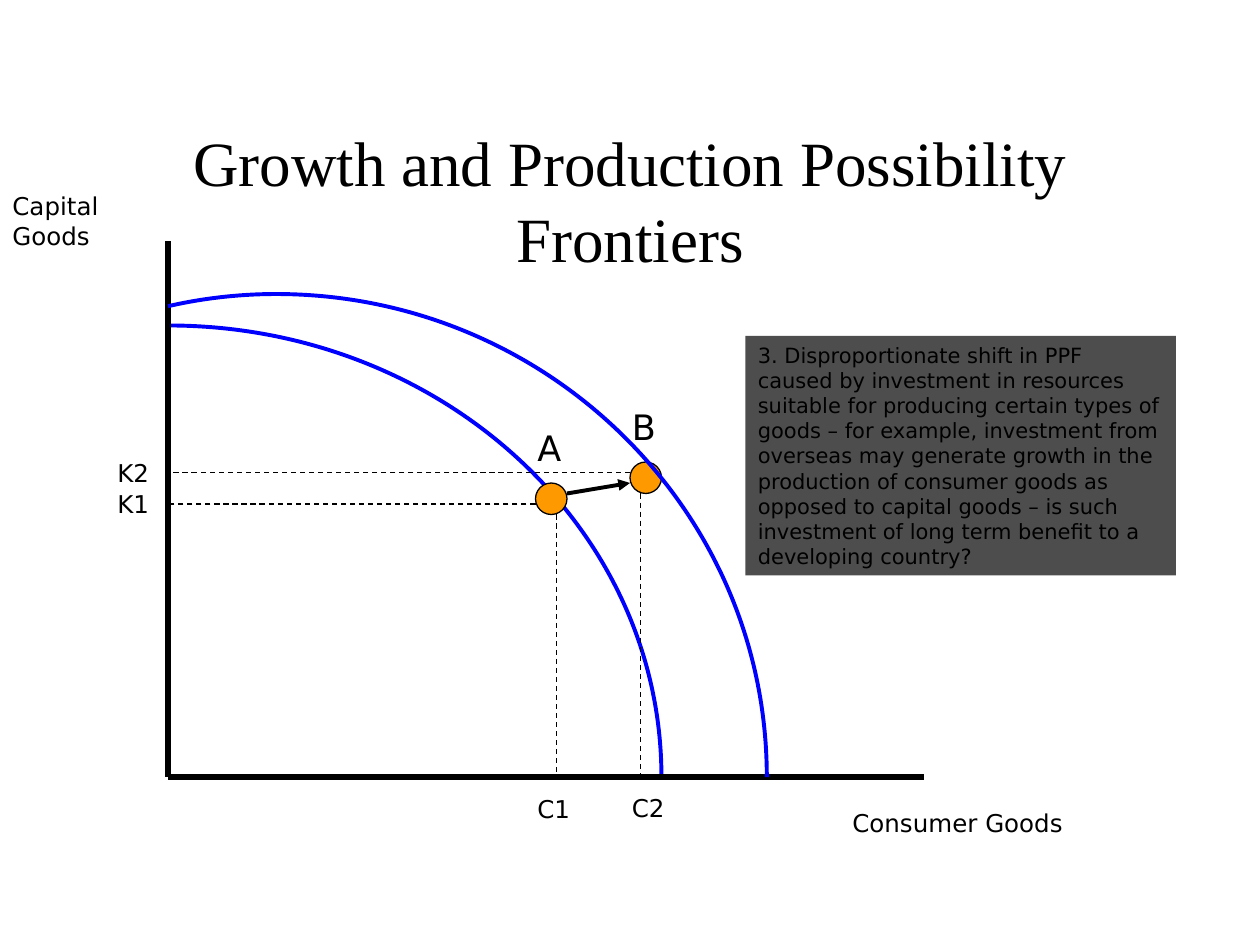
from typing import NamedTuple

from lxml import etree
from pptx import Presentation
from pptx.dml.color import RGBColor
from pptx.enum import dml, shapes, text
from pptx.oxml.ns import qn
from pptx.util import Pt

COLORS = {"ink": "000000", "curve": "0000FF", "point": "FF9900", "note": "4D4D4D"}
TITLE_FONT, BODY_FONT = "Times New Roman", "DejaVu Sans"
ORIGIN_X, ORIGIN_Y = 96, 444  # where the axes meet
POINT_SIZE = 18


class Label(NamedTuple):
    words: str
    left: float
    top: float
    width: float
    height: float = 24
    size: float = 14
    wrap: bool = False


class Line(NamedTuple):
    start: tuple[float, float]
    end: tuple[float, float]
    weight: float = 0.75
    dashed: bool = False
    arrow: bool = False


def color(name: str) -> RGBColor:
    return RGBColor.from_string(COLORS[name])


def write(frame, words: str, size: float, font: str = BODY_FONT) -> None:
    frame.text = words
    for span in frame.paragraphs[0].runs:
        span.font.name = font
        span.font.size = Pt(size)
        span.font.color.rgb = color("ink")


def draw_label(page, label: Label) -> None:
    box = page.shapes.add_textbox(*map(Pt, label[1:5]))
    box.text_frame.word_wrap = label.wrap
    box.text_frame.auto_size = text.MSO_AUTO_SIZE.SHAPE_TO_FIT_TEXT
    write(box.text_frame, label.words, label.size)


def draw_line(page, line: Line) -> None:
    connector = page.shapes.add_connector(
        shapes.MSO_CONNECTOR.STRAIGHT, *map(Pt, line.start + line.end))
    connector.line.color.rgb = color("ink")
    connector.line.width = Pt(line.weight)
    if line.dashed:
        connector.line.dash_style = dml.MSO_LINE.DASH
    properties = connector._element.spPr
    if line.arrow:
        etree.SubElement(properties.find(qn("a:ln")), qn("a:tailEnd"), type="triangle")
    etree.SubElement(properties, qn("a:effectLst"))


def draw_frontier(page, points: list[tuple[float, float]]) -> None:
    """Draw Bezier segments: a start, then two controls and an end for each."""
    start, *others = [(Pt(x), Pt(y)) for x, y in points]
    builder = page.shapes.build_freeform(*start)
    builder.add_line_segments(others, close=False)
    curve = builder.convert_to_shape()
    curve.shadow.inherit = False
    curve.fill.background()
    curve.line.color.rgb = color("curve")
    curve.line.width = Pt(2.25)
    # Turn each three straight steps into one cubic curve
    outline = next(curve._element.iter(qn("a:path")))
    steps = outline.findall(qn("a:lnTo"))
    for index in range(0, len(steps), 3):
        bezier = etree.SubElement(outline, qn("a:cubicBezTo"))
        for step in steps[index:index + 3]:
            bezier.append(step[0])
            outline.remove(step)


def draw_point(page, left: float, top: float) -> None:
    dot = page.shapes.add_shape(
        shapes.MSO_SHAPE.OVAL, Pt(left), Pt(top), Pt(POINT_SIZE), Pt(POINT_SIZE))
    dot.shadow.inherit = False
    dot.fill.solid()
    dot.fill.fore_color.rgb = color("point")
    dot.line.color.rgb = color("ink")
    dot.line.width = Pt(0.75)


def draw_note(page, words: str) -> None:
    note = page.shapes.add_shape(
        shapes.MSO_SHAPE.RECTANGLE, Pt(426), Pt(192), Pt(246), Pt(136.8))
    note.shadow.inherit = False
    note.fill.solid()
    note.fill.fore_color.rgb = color("note")
    note.line.fill.background()
    frame = note.text_frame
    frame.word_wrap = True
    frame.auto_size = text.MSO_AUTO_SIZE.SHAPE_TO_FIT_TEXT
    frame.vertical_anchor = text.MSO_ANCHOR.TOP
    write(frame, words, 12)
    frame.paragraphs[0].alignment = text.PP_ALIGN.LEFT


LINES = [
    # Axes
    Line((ORIGIN_X, 138), (ORIGIN_X, ORIGIN_Y), 3),
    Line((ORIGIN_X, ORIGIN_Y), (528, ORIGIN_Y), 3),
    # Move from A to B
    Line((324, 282), (360, 276), 2.25, arrow=True),
    # Guides to K1, C1, K2 and C2
    Line((306, 288), (ORIGIN_X, 288), dashed=True),
    Line((318, 294), (318, ORIGIN_Y), dashed=True),
    Line((360, 270), (ORIGIN_X, 270), dashed=True),
    Line((366, 282), (366, ORIGIN_Y), dashed=True),
]

LABELS = [
    Label("Capital Goods", 0, 105.8, 108, 41, wrap=True),
    Label("Consumer Goods", 480, 458, 134.6),
    Label("A", 300, 240, 36, 31, 20, True),
    Label("B", 354, 228, 30, 31, 20, True),
    Label("K1", 60, 276, 33),
    Label("K2", 60, 258, 33),
    Label("C1", 300, 450, 42, wrap=True),
    Label("C2", 354, 449.5, 33),
]

INNER_FRONTIER = [(ORIGIN_X, 186), (252, 186), (378, 301.5), (378, ORIGIN_Y)]
OUTER_FRONTIER = [(ORIGIN_X, 175), (116, 170.4), (137, 168), (157.7, 168),
                  (312.5, 168), (438.2, 291.6), (438.2, ORIGIN_Y)]

NOTE = (
    "3. Disproportionate shift in PPF caused by investment in resources suitable for "
    "producing certain types of goods – for example, investment from overseas may "
    "generate growth in the production of consumer goods as opposed to capital goods – "
    "is such investment of long term benefit to a developing country?"
)


def main() -> None:
    deck = Presentation()
    deck.slide_width, deck.slide_height = Pt(720), Pt(540)
    page = deck.slides.add_slide(deck.slide_layouts[5])

    # Title
    title = page.shapes.title
    title.left, title.top, title.width, title.height = map(Pt, (54, 84, 612, 60))
    title.text_frame.auto_size = text.MSO_AUTO_SIZE.NONE
    title.text_frame.vertical_anchor = text.MSO_ANCHOR.MIDDLE
    write(title.text_frame, "Growth and Production Possibility Frontiers", 36, TITLE_FONT)
    title.text_frame.paragraphs[0].alignment = text.PP_ALIGN.CENTER

    # Diagram, from back to front
    draw_frontier(page, INNER_FRONTIER)
    for line in LINES:
        draw_line(page, line)
    draw_point(page, 306, 276)
    draw_point(page, 360, 264)
    draw_frontier(page, OUTER_FRONTIER)

    # Words
    for label in LABELS:
        draw_label(page, label)
    draw_note(page, NOTE)

    deck.save("out.pptx")


if __name__ == "__main__":
    main()
